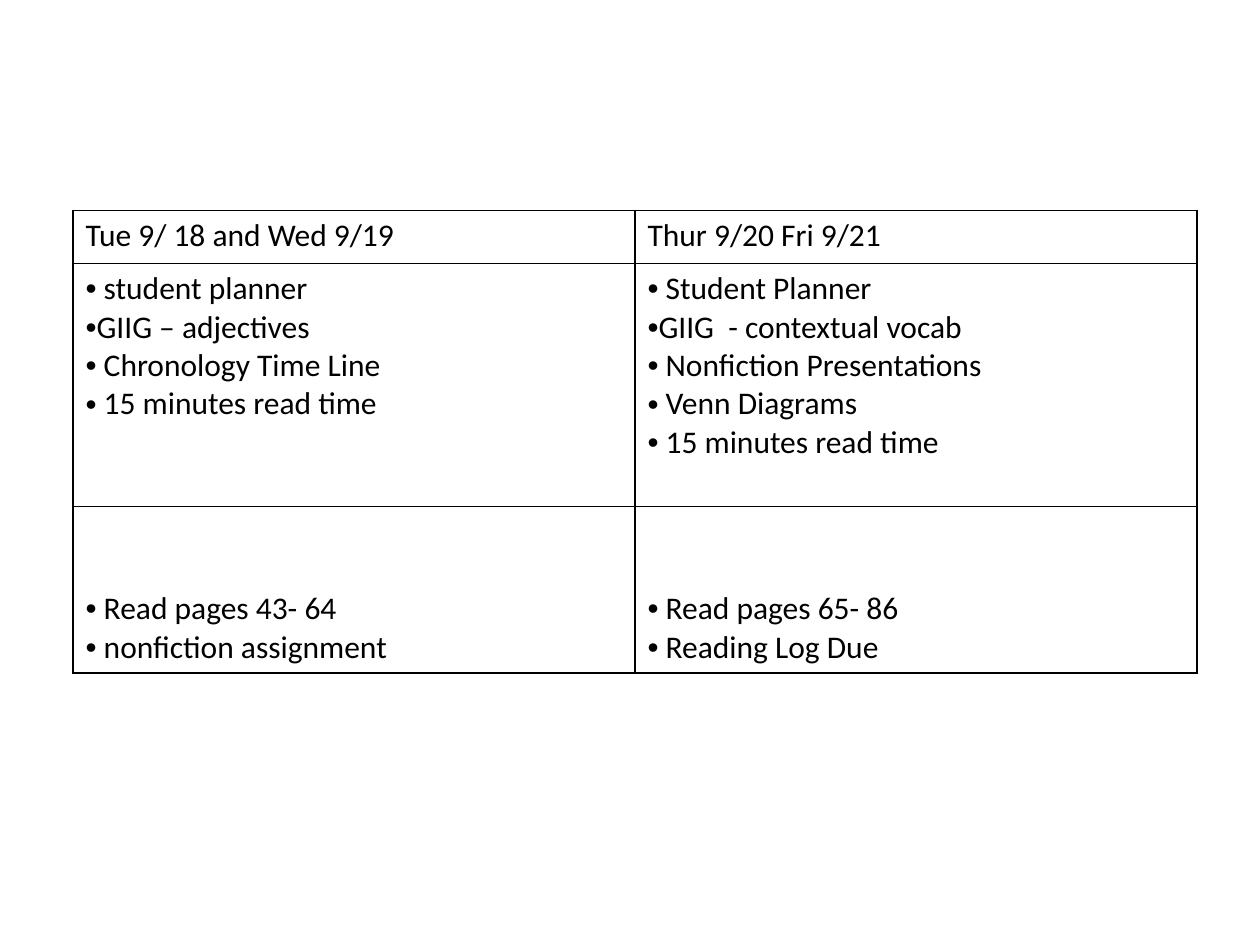
from lxml import etree
from pptx import Presentation, util as u
from pptx.dml.color import RGBColor
from pptx.enum import text
from pptx.oxml.ns import qn

COLORS = {"ink": "000000", "paper": "FFFFFF"}
FONT, FONT_SIZE = "Calibri", 18
LEFT, TOP = 0.58, 1.67
COLUMN_WIDTH = 4.46
ROW_HEIGHTS = [0.42, 1.93, 1.32]

DAYS = ["Tue 9/ 18 and Wed 9/19", "Thur 9/20 Fri 9/21"]
CLASSWORK = [
    [" student planner", "GIIG – adjectives", " Chronology Time Line",
     " 15 minutes read time"],
    [" Student Planner", "GIIG  - contextual vocab",
     " Nonfiction Presentations", " Venn Diagrams", " 15 minutes read time"],
]
HOMEWORK = [
    [" Read pages 43- 64", " nonfiction assignment"],
    [" Read pages 65- 86", " Reading Log Due"],
]


def add_borders(cell, width=1):
    """Draw a solid line on all four sides of a cell."""
    properties = cell._tc.get_or_add_tcPr()
    for position, side in enumerate(("lnL", "lnR", "lnT", "lnB")):
        line = etree.Element(qn(f"a:{side}"), w=str(u.Pt(width)))
        fill = etree.SubElement(line, qn("a:solidFill"))
        etree.SubElement(fill, qn("a:srgbClr"), val=COLORS["ink"])
        properties.insert(position, line)


def add_bullet(paragraph):
    properties = paragraph._p.get_or_add_pPr()
    properties.set("marL", "0")
    properties.set("indent", "0")
    etree.SubElement(properties, qn("a:buFont"), typeface="Arial")
    etree.SubElement(properties, qn("a:buChar"), char="•")


def fill_cell(cell, lines, bulleted, anchor):
    cell.fill.solid()
    cell.fill.fore_color.rgb = RGBColor.from_string(COLORS["paper"])
    cell.vertical_anchor = anchor
    cell.text_frame.text = "\n".join(lines)
    for paragraph in cell.text_frame.paragraphs:
        if bulleted:
            add_bullet(paragraph)
        for run in paragraph.runs:
            run.font.name = FONT
            run.font.size = u.Pt(FONT_SIZE)
            run.font.bold = False
            run.font.color.rgb = RGBColor.from_string(COLORS["ink"])
    add_borders(cell)


def add_agenda(slide):
    top, bottom = text.MSO_ANCHOR.TOP, text.MSO_ANCHOR.BOTTOM
    # Each row: entries per column, bulleted or not, vertical anchor
    rows = [
        ([[day] for day in DAYS], False, top),
        (CLASSWORK, True, top),
        (HOMEWORK, True, bottom),
    ]
    agenda = slide.shapes.add_table(
        len(rows), len(DAYS), u.Inches(LEFT), u.Inches(TOP),
        u.Inches(COLUMN_WIDTH * len(DAYS)), u.Inches(sum(ROW_HEIGHTS))).table
    agenda.first_row = agenda.horz_banding = False

    for column in agenda.columns:
        column.width = u.Inches(COLUMN_WIDTH)
    for row, height in zip(agenda.rows, ROW_HEIGHTS):
        row.height = u.Inches(height)
    for row, (entries, bulleted, anchor) in zip(agenda.rows, rows):
        for cell, lines in zip(row.cells, entries):
            fill_cell(cell, lines, bulleted, anchor)


def main():
    deck = Presentation()
    deck.slide_width, deck.slide_height = u.Inches(10), u.Inches(7.5)
    slide = deck.slides.add_slide(deck.slide_layouts[6])
    add_agenda(slide)
    deck.save("out.pptx")


if __name__ == "__main__":
    main()
